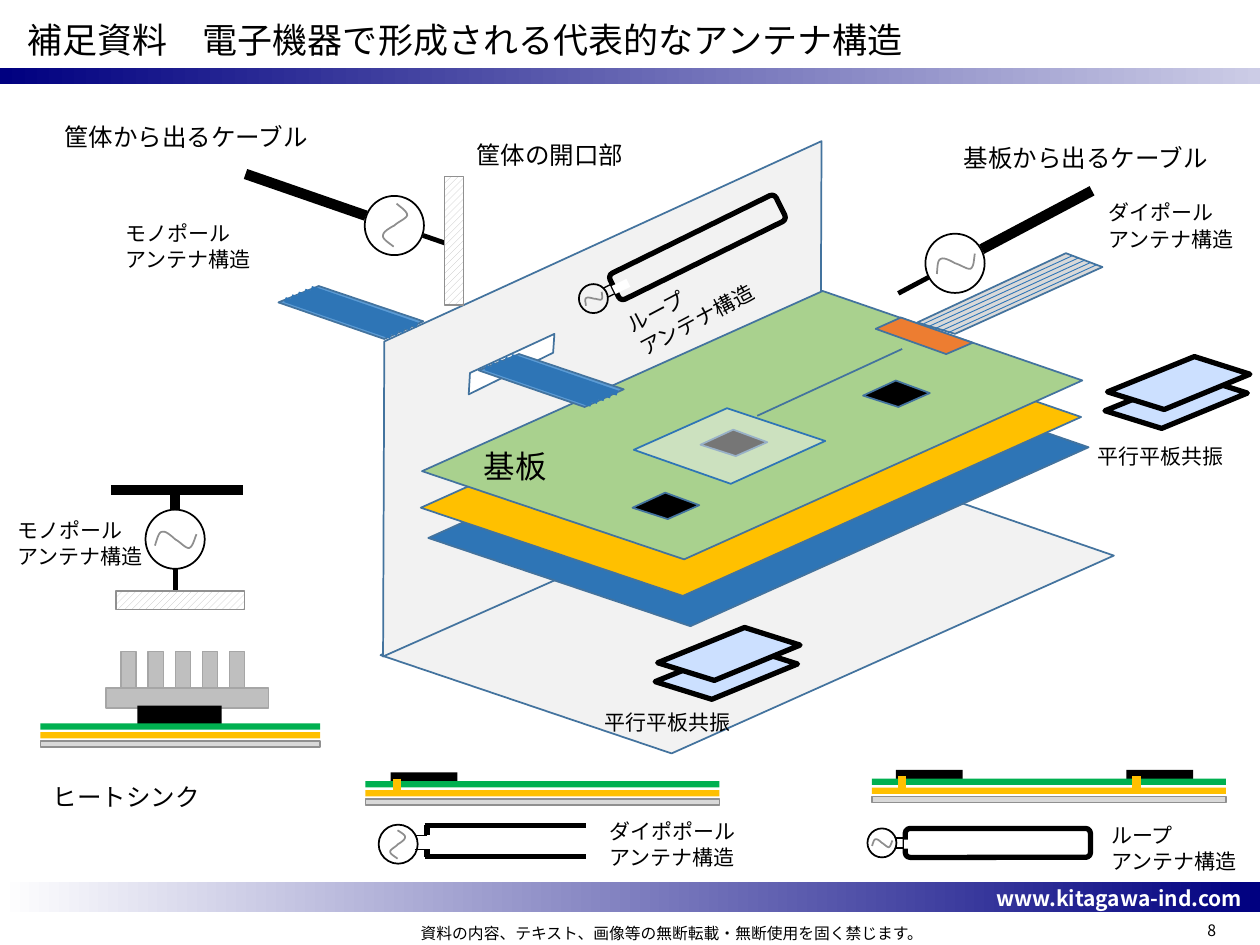
import math

import pptx
import pptx.dml.color
import pptx.enum.dml
import pptx.enum.shapes
import pptx.enum.text
import pptx.oxml
import pptx.oxml.ns
import pptx.util

FONT = "Noto Sans CJK JP"
COLORS = {
    "black": "000000", "white": "FFFFFF", "navy": "000080", "lavender": "CCCCE6",
    "green": "00B050", "gold": "FFC000", "silver": "D9D9D9", "edge": "909090",
    "wave": "8E8E8E", "sink": "BFBFBF", "sink_edge": "A6A6A6", "hatch": "C0C0C0",
    "wall": "F2F2F2", "outline": "43739E", "blue": "2E75B6", "board": "A9D18E",
    "orange": "ED7D31", "ribbon": "5B9BD5", "plate": "CCE0FF",
}
SHAPES = pptx.enum.shapes.MSO_SHAPE
ALIGN = pptx.enum.text.PP_ALIGN
BOARD = [(0, 1.43), (2.08, 2.13), (5.24, 0.71), (3.18, 0)]
CHIP = [(0, 0.12), (0.26, 0), (0.53, 0.1), (0.28, 0.21)]
PLATE = [(0, 0.28), (0.45, 0.42), (1.13, 0.14), (0.69, 0)]
RIBBON = [(0, 0.13), (0.32, 0), (1.15, 0.28), (0.84, 0.42)]
WAVE = [(-0.16, 0.05), (-0.14, -0.01), (-0.13, -0.06), (-0.1, -0.06), (-0.07, -0.07),
        (0, 0), (0, 0), (0.04, 0.02), (0.08, 0.07), (0.11, 0.07),
        (0.14, 0.06), (0.15, 0.01), (0.17, -0.04)]


def inch(value):
    return pptx.util.Cm(2.54 * value)


def rgb(name):
    return pptx.dml.color.RGBColor.from_string(COLORS[name])


def turn(point, angle):
    """Rotate a point clockwise about (0, 0)."""
    a = math.radians(angle)
    x, y = point
    return x * math.cos(a) - y * math.sin(a), x * math.sin(a) + y * math.cos(a)


def paint(shape, fill=None, line=None, weight=1):
    shape.shadow.inherit = False
    if fill:
        shape.fill.solid()
        shape.fill.fore_color.rgb = rgb(fill)
    else:
        shape.fill.background()
    if line:
        shape.line.color.rgb = rgb(line)
        shape.line.width = pptx.util.Pt(weight)
    else:
        shape.line.fill.background()
    return shape


def box(slide, left, top, width, height, fill=None, line=None, weight=0.75, kind=SHAPES.RECTANGLE):
    shape = slide.shapes.add_shape(kind, inch(left), inch(top), inch(width), inch(height))
    return paint(shape, fill, line, weight)


def line(slide, x, y, start, end, color="black", weight=0.75):
    connector = slide.shapes.add_connector(
        pptx.enum.shapes.MSO_CONNECTOR.STRAIGHT,
        inch(x + start[0]), inch(y + start[1]), inch(x + end[0]), inch(y + end[1]))
    connector.line.color.rgb = rgb(color)
    connector.line.width = pptx.util.Pt(weight)
    pptx.oxml.ns.qn("a:effectLst")
    connector._element.spPr.append(pptx.oxml.parse_xml(
        '<a:effectLst xmlns:a="http://schemas.openxmlformats.org/drawingml/2006/main"/>'))


def outline(slide, x, y, points, fill=None, color="outline", weight=1, close=True):
    places = [(inch(x + px), inch(y + py)) for px, py in points]
    builder = slide.shapes.build_freeform(*places[0])
    builder.add_line_segments(places[1:], close=close)
    return paint(builder.convert_to_shape(), fill, color, weight)


def write(shape, text, size, align=ALIGN.LEFT, color="black", bold=False):
    frame = shape.text_frame
    frame.text = text
    for paragraph in frame.paragraphs:
        paragraph.alignment = align
        paragraph.line_spacing = pptx.util.Pt(1.25 * size)
        for run in paragraph.runs:
            run.font.name = FONT
            run.font.size = pptx.util.Pt(size)
            run.font.bold = bold
            run.font.color.rgb = rgb(color)
            east_asian = run.font._element.makeelement(pptx.oxml.ns.qn("a:ea"), {"typeface": FONT})
            run.font._element.find(pptx.oxml.ns.qn("a:latin")).addnext(east_asian)


def label(slide, left, top, width, height, text, size, align=ALIGN.LEFT, rotation=0):
    shape = slide.shapes.add_textbox(inch(left), inch(top), inch(width), inch(height))
    shape.text_frame.word_wrap = True
    shape.rotation = rotation
    write(shape, text, size, align)


def gradient_band(slide, top, height, first, last):
    band = box(slide, 0, top, 10, height)
    band.fill.gradient()
    band.fill.gradient_angle = 0
    for stop, color, position in zip(band.fill.gradient_stops, (first, last), (0, 1)):
        stop.color.rgb = rgb(color)
        stop.position = position
    return band


def page_frame(slide):
    gradient_band(slide, 0.54, 0.13, "navy", "lavender")
    footer = gradient_band(slide, 7, 0.24, "white", "navy")
    footer.text_frame.word_wrap = False
    footer.text_frame.vertical_anchor = pptx.enum.text.MSO_ANCHOR.MIDDLE
    footer.text_frame.margin_right = inch(0.14)
    write(footer, "www.kitagawa-ind.com", 12, ALIGN.RIGHT, "white", True)
    label(slide, 0.12, 0.08, 8.33, 0.55, "補足資料　電子機器で形成される代表的なアンテナ構造", 20)
    label(slide, 1.83, 7.28, 7, 0.25, "資料の内容、テキスト、画像等の無断転載・無断使用を固く禁じます。", 9, ALIGN.CENTER)
    label(slide, 8.92, 7.25, 0.83, 0.25, "8", 9, ALIGN.RIGHT)


def ac_source(slide, x, y, size, angle):
    """Circle with a wave, centred on x, y."""
    box(slide, x - size / 2, y - size / 2, size, size, None, "black", 1, SHAPES.OVAL)
    points = [WAVE[0]]
    for k in range(0, 12, 3):
        for step in range(1, 9):
            t = step / 8
            weights = [(1 - t) ** 3, 3 * t * (1 - t) ** 2, 3 * t * t * (1 - t), t ** 3]
            points.append(tuple(sum(w * p[axis] for w, p in zip(weights, WAVE[k:k + 4]))
                                for axis in (0, 1)))
    scale = size / 0.47
    turned = [turn((px * scale, py * scale), angle) for px, py in points]
    outline(slide, x, y, turned, None, "wave", 1, False)


def rod_antenna(slide, x, y, angle, wave_angle, reach):
    """Source with a thin lead on one side and a thick rod on the other."""
    ac_source(slide, x, y, 0.47, wave_angle)
    line(slide, x, y, turn((0, 0.24), angle), turn((0, 0.51), angle), weight=2.75)
    line(slide, x, y, turn((0, -0.24), angle), turn((0, -reach), angle), weight=6)


def hatched_plate(slide, left, top, width, height):
    plate = box(slide, left, top, width, height, None, "edge")
    plate.fill.patterned()
    plate.fill.pattern = pptx.enum.dml.MSO_PATTERN.WIDE_UPWARD_DIAGONAL
    plate.fill.fore_color.rgb = rgb("hatch")
    plate.fill.back_color.rgb = rgb("white")


def loop_antenna(slide, x, y, angle=0):
    ac_source(slide, x, y, 0.23, angle)
    for offset in (-0.04, 0.04):
        line(slide, x, y, turn((0.11, offset), angle), turn((0.18, offset), angle))
    for center, width, height, fill, edge, kind in (
            ((0.92, 0), 1.47, 0.23, None, "black", SHAPES.ROUNDED_RECTANGLE),
            ((0.24, 0.01), 0.13, 0.07, "white", None, SHAPES.RECTANGLE)):
        dx, dy = turn(center, angle)
        part = box(slide, x + dx - width / 2, y + dy - height / 2, width, height, fill, edge, 3, kind)
        part.rotation = angle


def open_dipole(slide, x, y):
    ac_source(slide, x, y, 0.31, 105)
    for stub, bar in ((-0.07, -0.15), (0.04, 0.1)):
        line(slide, x, y, (0.13, stub), (0.23, stub))
        line(slide, x, y, (0.23, stub), (0.23, bar), weight=3)
        line(slide, x, y, (0.21, bar), (1.49, bar), weight=3)


def board_section(slide, left, top, width, chips=(), vias=()):
    for chip in chips:
        box(slide, left + chip, top - 0.07, 0.53, 0.08, "black")
    for row, (fill, edge) in enumerate((("green", None), ("gold", None), ("silver", "edge"))):
        box(slide, left, top + 0.07 * row, width, 0.05, fill, edge)
    for via in vias:
        line(slide, left, top, (via, -0.02), (via, 0.12), "gold", 4.75)


def heat_sink(slide, left, top):
    box(slide, left + 0.52, top + 0.29, 1.29, 0.16, "sink", "sink_edge")
    for fin in range(5):
        box(slide, left + 0.64 + 0.215 * fin, top, 0.12, 0.29, "sink", "sink_edge")
    box(slide, left + 0.77, top + 0.43, 0.67, 0.15, "black")
    board_section(slide, left, top + 0.57, 2.22)


def ribbon_cable(slide, left, top):
    outline(slide, left, top, RIBBON, "ribbon")
    for wire in range(5):
        dx, dy = -0.052 * wire, 0.022 * wire
        line(slide, left + dx, top + dy, (0.26, 0.02), (1.1, 0.31), "blue", 3)


def parallel_plates(slide, left, top):
    outline(slide, left, top + 0.15, PLATE, "plate", "black", 3)
    outline(slide, left + 0.02, top, PLATE, "plate", "black", 3)


def chassis(slide, left, top):
    """Walls, stacked boards and cables, drawn from back to front."""
    def place(dx, dy, points, fill, color="outline"):
        return outline(slide, left + dx, top + dy, points, fill, color)

    place(0, 2.5, [(0, 1.58), (2.31, 2.36), (5.82, 0.79), (3.53, 0)], "wall")
    place(0.02, 0, [(0, 4.09), (0.01, 1.59), (3.48, 0), (3.47, 2.55)], "wall")
    for dx, dy, fill in ((0.38, 1.72, "blue"), (0.32, 1.48, "gold"), (0.33, 1.19, "board")):
        place(dx, dy, BOARD, fill)
    place(3.93, 1.4, [(0.2, 0), (0, 0.09), (0.56, 0.29), (0.77, 0.2)], "orange")
    place(4.26, 0.89, [(1.18, 0), (0, 0.55), (0.3, 0.64), (1.47, 0.11)], "silver")
    for wire in range(5):
        line(slide, left + 4.31 + 0.048 * wire, top + 0.91 + 0.018 * wire,
             (0, 0.54), (1.18, 0), "blue", 0.5)
    for dx, dy in ((2.54, 2.29), (2, 2.79), (3.83, 1.9)):
        place(dx, dy, CHIP, "black")
    line(slide, left, top, (2.99, 2.18), (4.14, 1.65), "outline", 1)
    sink = place(2.01, 2.12, [(0, 0.33), (0.74, 0), (1.52, 0.26), (0.77, 0.6)], "wall", "blue")
    tint = sink._element.spPr.find(pptx.oxml.ns.qn("a:solidFill"))[0]
    tint.append(tint.makeelement(pptx.oxml.ns.qn("a:alpha"), {"val": "49000"}))
    place(0.7, 1.53, [(0, 0.48), (0.67, 0.15), (0.68, 0), (0.01, 0.31)], "white")
    ribbon_cable(slide, left + 0.78, top + 1.69)
    ribbon_cable(slide, left - 0.81, top + 1.15)


def captions(slide):
    for left, top, text in ((0.41, 0.91, "筐体から出るケーブル"), (0.32, 6.15, "ヒートシンク"),
                            (7.55, 1.08, "基板から出るケーブル"), (3.68, 1.05, "筐体の開口部")):
        label(slide, left, top, 3.59, 0.34, text, 14)
    for left, top, name, rotation in ((0.9, 1.69, "モノポール", 0), (0.04, 4.05, "モノポール", 0),
                                      (8.7, 1.53, "ダイポール", 0), (4.84, 2.03, "ループ", 332.1),
                                      (4.74, 6.44, "ダイポポール", 0), (8.72, 6.47, "ループ", 0)):
        label(slide, left, top, 1.86, 0.5, name + "\nアンテナ構造", 12, rotation=rotation)
    for left, top in ((8.61, 3.46), (4.7, 5.57)):
        label(slide, left, top, 1.39, 0.3, "平行平板共振", 12)
    label(slide, 3.74, 3.49, 3.59, 0.4, "基板", 18)


def main():
    presentation = pptx.Presentation()
    presentation.slide_width, presentation.slide_height = inch(10), inch(7.5)
    slide = presentation.slides.add_slide(presentation.slide_layouts[6])
    page_frame(slide)
    rod_antenna(slide, 7.58, 2.09, 62.1, -13, 1.23)
    loop_antenna(slide, 7, 6.69)
    board_section(slide, 6.92, 6.18, 2.81, chips=(0.19, 2.02), vias=(0.24, 2.1))
    open_dipole(slide, 3.16, 6.7)
    board_section(slide, 2.9, 6.2, 2.81, chips=(0.2,), vias=(0.25,))
    heat_sink(slide, 0.32, 5.17)
    rod_antenna(slide, 1.39, 4.28, 0, 0, 0.36)
    hatched_plate(slide, 0.92, 4.69, 1.02, 0.15)
    line(slide, 0.88, 3.89, (0, 0), (1.05, 0), weight=6)
    chassis(slide, 3.02, 1.12)
    loop_antenna(slide, 4.71, 2.37, -26.2)
    rod_antenna(slide, 3.13, 1.79, -70.9, -70.9, 1.25)
    hatched_plate(slide, 3.53, 1.4, 0.15, 1.02)
    parallel_plates(slide, 5.2, 4.98)
    parallel_plates(slide, 8.77, 2.83)
    captions(slide)
    presentation.save("out.pptx")


if __name__ == "__main__":
    main()
